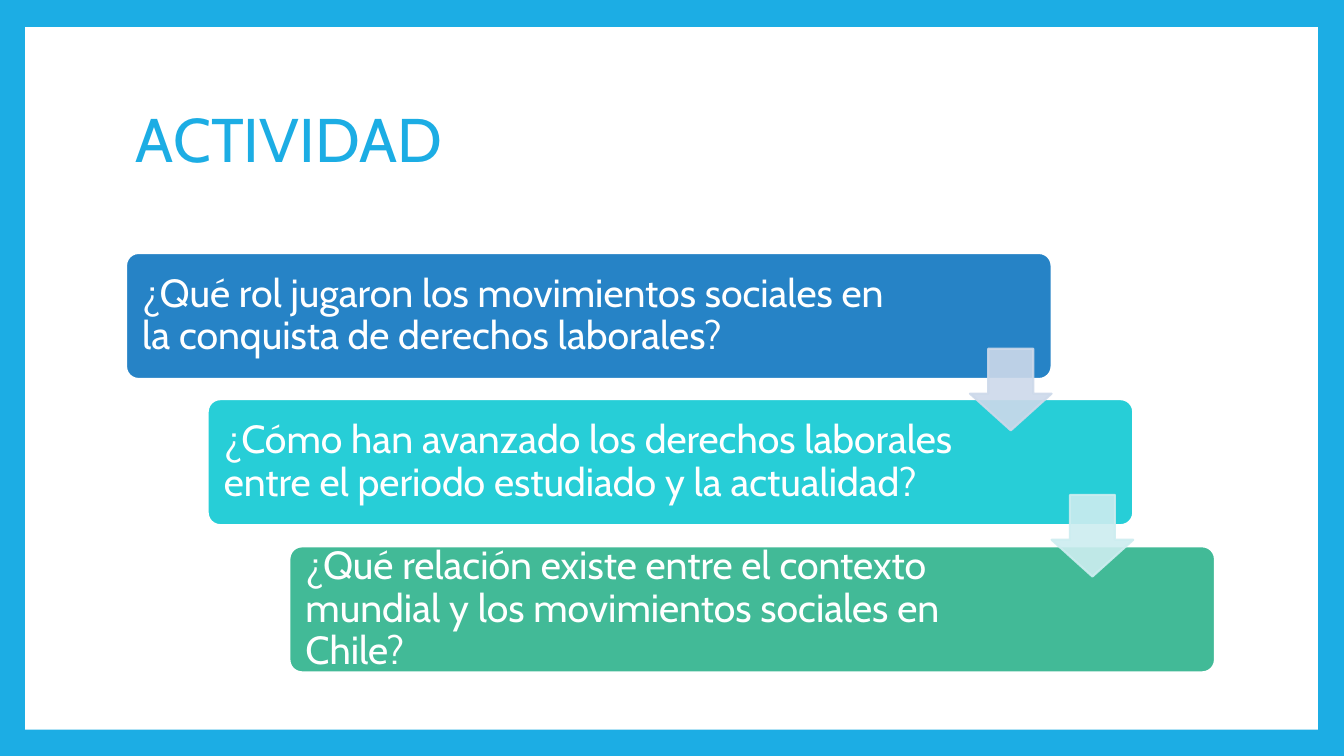
import pptx
import pptx.dml.color
import pptx.enum.shapes
import pptx.enum.text
import pptx.oxml.ns
import pptx.util
from lxml import etree

RGBColor = pptx.dml.color.RGBColor
MSO_SHAPE = pptx.enum.shapes.MSO_SHAPE

EMU_PER_PX = 9144  # 100 px to the inch
FONT = "Cabin"

SKY = RGBColor(0x1C, 0xAD, 0xE4)
WHITE = RGBColor(0xFF, 0xFF, 0xFF)
BLUE = RGBColor(0x26, 0x83, 0xC6)
TURQUOISE = RGBColor(0x27, 0xCE, 0xD7)
GREEN = RGBColor(0x42, 0xBA, 0x97)
PALE_BLUE = RGBColor(0xCD, 0xD9, 0xEA)
PALE_TURQUOISE = RGBColor(0xCD, 0xED, 0xF0)

# Question, card colour, width of its text
QUESTIONS = [
    ("¿Qué rol jugaron los movimientos sociales en la conquista de derechos laborales?", BLUE, 783),
    ("¿Cómo han avanzado los derechos laborales entre el periodo estudiado y la actualidad?", TURQUOISE, 748),
    ("¿Qué relación existe entre el contexto mundial y los movimientos sociales en Chile?", GREEN, 748),
]
ARROW_COLORS = [PALE_BLUE, PALE_TURQUOISE]

CARD_WIDTH, CARD_HEIGHT = 918, 125
CARD_PADDING = 4
ARROW_SIZE = 81


def px(length):
    return pptx.util.Emu(length * EMU_PER_PX)


def add_text(page, text, left, top, width, height, *, size, color, inset=10):
    box = page.shapes.add_textbox(px(left), px(top), px(width), px(height))
    frame = box.text_frame
    frame.word_wrap = True
    frame.vertical_anchor = pptx.enum.text.MSO_ANCHOR.MIDDLE
    frame.margin_left = frame.margin_right = px(inset)
    frame.margin_top = frame.margin_bottom = px(inset)
    para = frame.paragraphs[0]
    para.line_spacing = 0.9
    span = para.add_run()
    span.text = text
    span.font.name = FONT
    span.font.size = pptx.util.Pt(size)
    span.font.color.rgb = color


def add_block(page, kind, left, top, width, height, fill, line=None, adjustments=()):
    block = page.shapes.add_shape(kind, px(left), px(top), px(width), px(height))
    block.shadow.inherit = False
    block.fill.solid()
    block.fill.fore_color.rgb = fill
    if line is None:
        block.line.fill.background()
    else:
        block.line.color.rgb = line
        block.line.width = pptx.util.Pt(1.5)
    for index, value in enumerate(adjustments):
        block.adjustments[index] = value
    return block


def set_opacity(block, percent):
    """Apply one opacity to both the fill and the outline."""
    properties = block.fill._xPr
    for color in properties.iter(pptx.oxml.ns.qn("a:srgbClr")):
        alpha = etree.SubElement(color, pptx.oxml.ns.qn("a:alpha"))
        alpha.set("val", str(percent * 1000))


def card_corner(step):
    return 125 + 81 * step, 251 + 291 * step // 2


def add_card(page, step, question, color, text_width):
    left, top = card_corner(step)
    add_block(page, MSO_SHAPE.ROUNDED_RECTANGLE, left, top, CARD_WIDTH, CARD_HEIGHT,
              color, WHITE, [0.1])
    add_text(page, question, left + CARD_PADDING, top + CARD_PADDING,
             text_width, CARD_HEIGHT - 2 * CARD_PADDING, size=28, color=WHITE, inset=12)


def add_arrow(page, step, color):
    left, top = card_corner(step)
    arrow = add_block(page, MSO_SHAPE.DOWN_ARROW, left + CARD_WIDTH - ARROW_SIZE, top + 95,
                      ARROW_SIZE, ARROW_SIZE, color, color, [0.55, 0.45])
    # The preset lists the shaft width first and the head length second
    set_opacity(arrow, 90)


def main():
    deck = pptx.Presentation()
    deck.slide_width, deck.slide_height = px(1333), px(750)
    page = deck.slides.add_slide(deck.slide_layouts[6])

    # Blue frame around a white panel
    page.background.fill.solid()
    page.background.fill.fore_color.rgb = SKY
    add_block(page, MSO_SHAPE.RECTANGLE, 25, 27, 1282, 697, WHITE)

    # Title
    add_text(page, "ACTIVIDAD", 125, 67, 1080, 148, size=44, color=SKY)

    # Staircase of questions, then the arrows over it
    for step, (question, color, text_width) in enumerate(QUESTIONS):
        add_card(page, step, question, color, text_width)
    for step, color in enumerate(ARROW_COLORS):
        add_arrow(page, step, color)

    deck.save("out.pptx")


if __name__ == "__main__":
    main()
